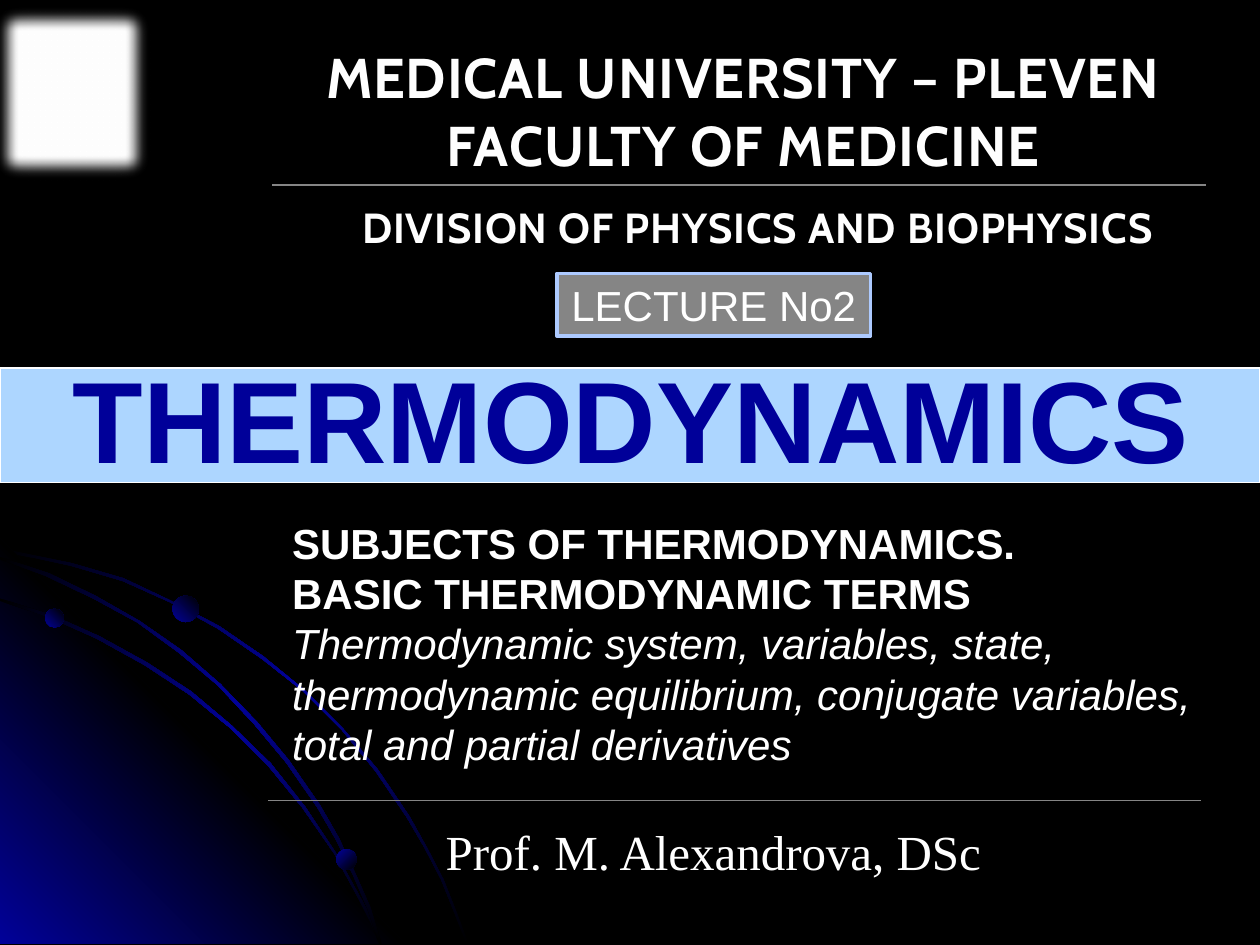
from dataclasses import dataclass, field

import pptx
import pptx.dml.color
import pptx.enum.shapes
import pptx.enum.text
import pptx.oxml
import pptx.oxml.ns
import pptx.oxml.xmlchemy
import pptx.util

Cm = pptx.util.Cm
Pt = pptx.util.Pt
RGBColor = pptx.dml.color.RGBColor
Shape = pptx.enum.shapes.MSO_SHAPE
Align = pptx.enum.text.PP_ALIGN
Anchor = pptx.enum.text.MSO_ANCHOR

BLACK = RGBColor(0x00, 0x00, 0x00)
WHITE = RGBColor(0xFF, 0xFF, 0xFF)
OFF_WHITE = RGBColor(0xFE, 0xFE, 0xFE)
GLOW_BLUE = RGBColor(0x01, 0x01, 0x99)
TITLE_BLUE = RGBColor(0x00, 0x00, 0x99)
BANNER_BLUE = RGBColor(0xAD, 0xD6, 0xFF)
EDGE_BLUE = RGBColor(0xAD, 0xCA, 0xFF)
GRAY = RGBColor(0x85, 0x85, 0x85)

HUNDREDTH_INCH = Cm(0.0254)
DRAWING_NS = pptx.oxml.ns.nsdecls("a")


@dataclass(frozen=True)
class Box:
    left: float
    top: float
    width: float
    height: float

    def lengths(self) -> tuple:
        return Cm(self.left), Cm(self.top), Cm(self.width), Cm(self.height)


@dataclass(frozen=True)
class Style:
    font: dict
    color: RGBColor = WHITE
    spacing: int = 0


@dataclass(frozen=True)
class Line:
    text: str
    style: Style


@dataclass(frozen=True)
class TextBlock:
    box: Box
    lines: tuple
    frame: dict = field(default_factory=lambda: {"word_wrap": True})
    alignment: Align = Align.CENTER


@dataclass(frozen=True)
class Outline:
    points: tuple
    colors: tuple
    angle: int


@dataclass(frozen=True)
class Ball:
    left: float
    top: float
    size: float
    angle: int


TITLE = Style({"name": "Arial", "size": Pt(66), "bold": True}, TITLE_BLUE)
UNIVERSITY = Style({"name": "Cabin", "size": Pt(32), "bold": True}, OFF_WHITE, 50)
DIVISION = Style({"name": "Cabin", "size": Pt(24), "bold": True}, OFF_WHITE, 50)
LECTURE = Style({"name": "Arial", "size": Pt(24)})
SUBJECT = Style({"name": "Arial", "size": Pt(24), "bold": True})
TOPICS = Style({"name": "Arial", "size": Pt(24), "italic": True})
LECTURER = Style({"name": "Times New Roman", "size": Pt(28)})

BAND = (BLACK, GLOW_BLUE, BLACK)
OUTLINES = (
    Outline((
        (57, 447), (28, 441), (0, 435), (0, 438), (28, 443), (56, 449), (97, 461),
        (135, 478), (173, 499), (208, 523), (241, 549), (271, 579), (298, 612),
        (323, 649), (337, 673), (350, 698), (360, 723), (370, 749), (372, 749),
        (362, 723), (352, 698), (339, 673), (325, 648), (300, 611), (272, 578),
        (242, 548), (209, 521), (174, 497), (136, 477), (98, 459)), BAND, 45),
    Outline(((322, 749), (0, 749), (0, 427)), (GLOW_BLUE, BLACK, GLOW_BLUE), 315),
    Outline((
        (285, 714), (294, 732), (301, 749), (303, 749), (296, 730), (286, 712),
        (266, 676), (242, 640), (215, 606), (184, 576), (152, 549), (117, 526),
        (79, 505), (41, 488), (0, 475), (0, 477), (39, 490), (77, 507), (115, 528),
        (150, 551), (183, 578), (213, 608), (240, 641), (265, 677)), BAND, 45),
    Outline((
        (0, 442), (0, 444), (36, 457), (74, 475), (109, 494), (142, 518), (173, 544),
        (202, 575), (227, 605), (252, 641), (267, 667), (280, 694), (292, 722),
        (301, 749), (303, 749), (294, 720), (282, 693), (269, 665), (254, 639),
        (229, 603), (204, 573), (175, 543), (144, 516), (111, 493), (76, 473),
        (39, 455)), BAND, 45),
)
BALLS = (
    Ball(0.91, 12.27, 0.38, 315),
    Ball(6.78, 17.12, 0.41, 45),
    Ball(3.48, 12.01, 0.53, 315),
)
TEXT_BLOCKS = (
    TextBlock(Box(0.69, 3.12, 24.71, 10.59), (Line("THERMODYNAMICS ", TITLE),),
              {"word_wrap": True, "vertical_anchor": Anchor.MIDDLE}),
    TextBlock(Box(5.08, 0.74, 19.81, 3), (
        Line("MEDICAL UNIVERSITY – PLEVEN", UNIVERSITY),
        Line("FACULTY OF MEDICINE", UNIVERSITY)), {"word_wrap": False}),
    TextBlock(Box(5.84, 3.94, 18.87, 1.27),
              (Line("DIVISION OF PHYSICS AND BIOPHYSICS", DIVISION),), {"word_wrap": False}),
    TextBlock(Box(5.64, 10.3, 19.23, 5.43), (
        Line("SUBJECTS OF THERMODYNAMICS.", SUBJECT),
        Line("BASIC THERMODYNAMIC TERMS", SUBJECT),
        Line("Thermodynamic system, variables, state, thermodynamic equilibrium, "
             "conjugate variables, total and partial derivatives", TOPICS)),
        alignment=Align.LEFT),
    TextBlock(Box(8.18, 16.43, 12.4, 1.45), (Line("Prof. M. Alexandrova, DSc", LECTURER),)),
)
LECTURE_BLOCK = TextBlock(Box(11.23, 5.51, 6.32, 1.27), (Line("LECTURE No2", LECTURE),),
                          {"word_wrap": False, "vertical_anchor": Anchor.TOP})


def apply_gradient(shape, colors: tuple, angle: int) -> None:
    shape.shadow.inherit = False
    shape.line.fill.background()
    shape.fill.background()
    stops = "".join(
        f'<a:gs pos="{100000 * i // (len(colors) - 1)}"><a:srgbClr val="{color}"/></a:gs>'
        for i, color in enumerate(colors))
    gradient = pptx.oxml.parse_xml(
        f'<a:gradFill {DRAWING_NS} rotWithShape="1"><a:gsLst>{stops}</a:gsLst>'
        f'<a:lin ang="{angle * 60000}" scaled="0"/></a:gradFill>')
    properties = shape._element.spPr
    properties.replace(properties.find(pptx.oxml.ns.qn("a:noFill")), gradient)


def draw_outline(slide, outline: Outline) -> None:
    first, *rest = outline.points
    builder = slide.shapes.build_freeform(*first, scale=HUNDREDTH_INCH)
    builder.add_line_segments(rest, close=True)
    apply_gradient(builder.convert_to_shape(), outline.colors, outline.angle)


def draw_ball(slide, ball: Ball) -> None:
    box = Box(ball.left, ball.top, ball.size, ball.size)
    circle = slide.shapes.add_shape(Shape.OVAL, *box.lengths())
    apply_gradient(circle, (GLOW_BLUE, BLACK), ball.angle)


def draw_panel(slide, box: Box, fill: RGBColor, edge: RGBColor, edge_width: float):
    panel = slide.shapes.add_shape(Shape.RECTANGLE, *box.lengths())
    panel.shadow.inherit = False
    panel.fill.solid()
    panel.fill.fore_color.rgb = fill
    panel.line.color.rgb = edge
    panel.line.width = Pt(edge_width)
    return panel


def write_text(shape, block: TextBlock) -> None:
    frame = shape.text_frame
    for name, value in block.frame.items():
        setattr(frame, name, value)
    for i, line in enumerate(block.lines):
        paragraph = frame.add_paragraph() if i else frame.paragraphs[0]
        paragraph.alignment = block.alignment
        run = paragraph.add_run()
        run.text = line.text
        for name, value in line.style.font.items():
            setattr(run.font, name, value)
        run.font.color.rgb = line.style.color
        if line.style.spacing:
            run._r.get_or_add_rPr().set("spc", str(line.style.spacing))


def draw_rule(slide, left: float, right: float, top: float) -> None:
    rule = slide.shapes.add_connector(
        pptx.enum.shapes.MSO_CONNECTOR.STRAIGHT, Cm(left), Cm(top), Cm(right), Cm(top))
    rule.line.color.rgb = GRAY
    rule.line.width = Pt(0.75)
    rule._element.spPr.append(pptx.oxml.parse_xml(f"<a:effectLst {DRAWING_NS}/>"))


def main() -> None:
    deck = pptx.Presentation()
    deck.slide_width, deck.slide_height = Cm(25.4), Cm(19.05)
    slide = deck.slides.add_slide(deck.slide_layouts[6])
    slide.background.fill.solid()
    slide.background.fill.fore_color.rgb = BLACK

    for outline in OUTLINES:
        draw_outline(slide, outline)
    for ball in BALLS:
        draw_ball(slide, ball)
    draw_panel(slide, Box(0, 7.42, 25.4, 2.31), BANNER_BLUE, WHITE, 1)
    for block in TEXT_BLOCKS:
        write_text(slide.shapes.add_textbox(*block.box.lengths()), block)
    draw_rule(slide, 5.49, 24.31, 3.73)
    draw_rule(slide, 5.41, 24.21, 16.13)
    write_text(draw_panel(slide, LECTURE_BLOCK.box, GRAY, EDGE_BLUE, 2), LECTURE_BLOCK)

    emblem = draw_panel(slide, Box(-0.2, 0.05, 3.3, 3.66), WHITE, EDGE_BLUE, 2)
    effects = emblem._element.spPr.find(pptx.oxml.ns.qn("a:effectLst"))
    effects.append(pptx.oxml.parse_xml(f'<a:softEdge {DRAWING_NS} rad="112500"/>'))

    deck.save("out.pptx")


if __name__ == "__main__":
    main()
